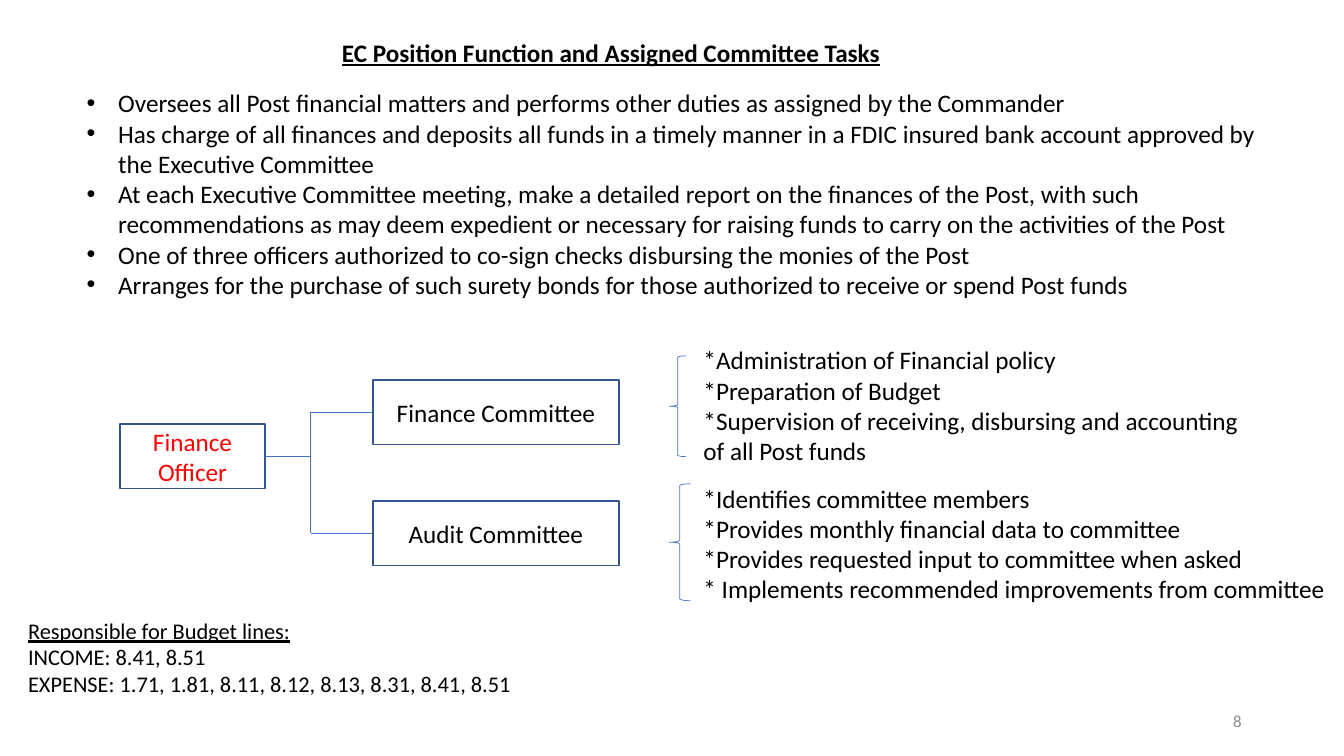
from lxml.etree import SubElement as Sub
from pptx import Presentation as Deck
from pptx.dml.color import RGBColor as Rgb
from pptx.enum.shapes import MSO_CONNECTOR as Link, MSO_SHAPE as Form
from pptx.enum.text import MSO_ANCHOR as Anchor, MSO_AUTO_SIZE as Auto, PP_ALIGN as Align
from pptx.oxml.ns import qn
from pptx.util import Pt


def color(code):
    return Rgb.from_string(code)


class Page:
    """Holds the style and the current slide; lengths are in points."""

    base = {"name": "Calibri", "size": 18, "color": "000000"}
    blue = "4472C4"
    edge = "325491"

    def __init__(self, deck):
        self.slide = deck.slides.add_slide(deck.slide_layouts[1])
        self.shapes = self.slide.shapes

    def style(self, font, **look):
        for key, val in {**self.base, **look}.items():
            if key == "color":
                font.color.rgb = color(val)
            else:
                setattr(font, key, Pt(val) if key == "size" else val)

    def fill(self, shape, lines, align=Align.LEFT, anchor=Anchor.TOP, wrap=True, **look):
        frame = shape.text_frame
        frame.text = "\n".join(lines)
        form = {"word_wrap": wrap, "auto_size": Auto.NONE, "vertical_anchor": anchor}
        for key, val in form.items():
            setattr(frame, key, val)
        for para in frame.paragraphs:
            form = {"alignment": align, "line_spacing": 1.0,
                    "space_before": Pt(0), "space_after": Pt(0)}
            for key, val in form.items():
                setattr(para, key, val)
            for run in para.runs:
                self.style(run.font, **look)
        return frame

    def place(self, shape, spot):
        for key, val in zip(("left", "top", "width", "height"), spot):
            setattr(shape, key, Pt(val))

    def title(self, spot, text):
        shape = self.shapes.title
        self.place(shape, spot)
        self.fill(shape, [text], anchor=Anchor.MIDDLE, wrap=False,
                  bold=True, underline=True)

    def list(self, spot, lines, indent=22.5):
        shape = self.slide.placeholders[1]
        self.place(shape, spot)
        for para in self.fill(shape, lines).paragraphs:
            props = para._p.get_or_add_pPr()
            props.set("marL", str(Pt(indent)))
            props.set("indent", str(-Pt(indent)))
            Sub(props, qn("a:buFont")).set("typeface", "Arial")
            Sub(props, qn("a:buChar")).set("char", "•")

    def text(self, spot, lines, **look):
        return self.fill(self.shapes.add_textbox(*map(Pt, spot)), lines, **look)

    def shape(self, kind, spot, line, width):
        shape = self.shapes.add_shape(kind, *map(Pt, spot))
        shape.shadow.inherit = False
        shape.fill.background()
        shape.line.color.rgb = color(line)
        shape.line.width = Pt(width)
        return shape

    def box(self, spot, text, **look):
        shape = self.shape(Form.RECTANGLE, spot, self.edge, 1)
        self.fill(shape, [text], align=Align.CENTER, anchor=Anchor.MIDDLE, **look)

    def brace(self, spot):
        self.shape(Form.LEFT_BRACE, spot, self.blue, 0.5)

    def line(self, *ends):
        link = self.shapes.add_connector(Link.STRAIGHT, *map(Pt, ends))
        link.line.color.rgb = color(self.blue)
        link.line.width = Pt(0.5)
        Sub(link._element.spPr, qn("a:effectLst"))


def main():
    deck = Deck()
    deck.slide_width, deck.slide_height = Pt(960), Pt(540)
    page = Page(deck)

    # Title and duties
    page.title((237, 23, 402.5, 29), "EC Position Function and Assigned Committee Tasks")
    page.list((54.7, 59, 864, 160), [
        "Oversees all Post financial matters and performs other duties as assigned by the Commander",
        "Has charge of all finances and deposits all funds in a timely manner in a FDIC insured "
        "bank account approved by the Executive Committee",
        "At each Executive Committee meeting, make a detailed report on the finances of the Post, "
        "with such recommendations as may deem expedient or necessary for raising funds to carry "
        "on the activities of the Post",
        "One of three officers authorized to co-sign checks disbursing the monies of the Post",
        "Arranges for the purchase of such surety bonds for those authorized to receive or spend "
        "Post funds",
    ])

    # Officer and trunk of the tree
    high, fork, left = 46, 222, 266.4
    page.box((85.7, 303, 103.7, high), "Finance Officer", color="FF0000")
    page.line(189.4, 326.3, fork, 326.3)

    # Committees with their tasks
    teams = [
        ("Finance Committee", 271.5, (478, 254.2, 12.2, 72), (495.4, 242.6, 400, 94.3), [
            "*Administration of Financial policy",
            "*Preparation of Budget",
            "*Supervision of receiving, disbursing and accounting",
            "of all Post funds"]),
        ("Audit Committee", 358, (478, 345.6, 15.1, 83.5), (495.4, 341.5, 459.4, 94.3), [
            "*Identifies committee members",
            "*Provides monthly financial data to committee",
            "*Provides requested input to committee when asked",
            "* Implements recommended improvements from committee"]),
    ]
    mids = [top + high / 2 for _, top, *_ in teams]
    page.line(fork, mids[0], fork, mids[1])
    for (name, top, brace, spot, tasks), mid in zip(teams, mids):
        page.line(fork, mid, left, mid)
        page.box((left, top, 175.7, high), name)
        page.brace(brace)
        page.text(spot, tasks)

    # Budget lines
    frame = page.text((13, 437, 530, 65.5), [
        "Responsible for Budget lines:",
        "INCOME: 8.41, 8.51",
        "EXPENSE: 1.71, 1.81, 8.11, 8.12, 8.13, 8.31, 8.41, 8.51"], size=16)
    frame.paragraphs[0].runs[0].font.underline = True

    # Page number
    page.text((678, 500.5, 216, 28.8), ["8"], align=Align.RIGHT, anchor=Anchor.MIDDLE,
              size=12, color="8C8C8C")

    deck.save("out.pptx")


if __name__ == "__main__":
    main()
